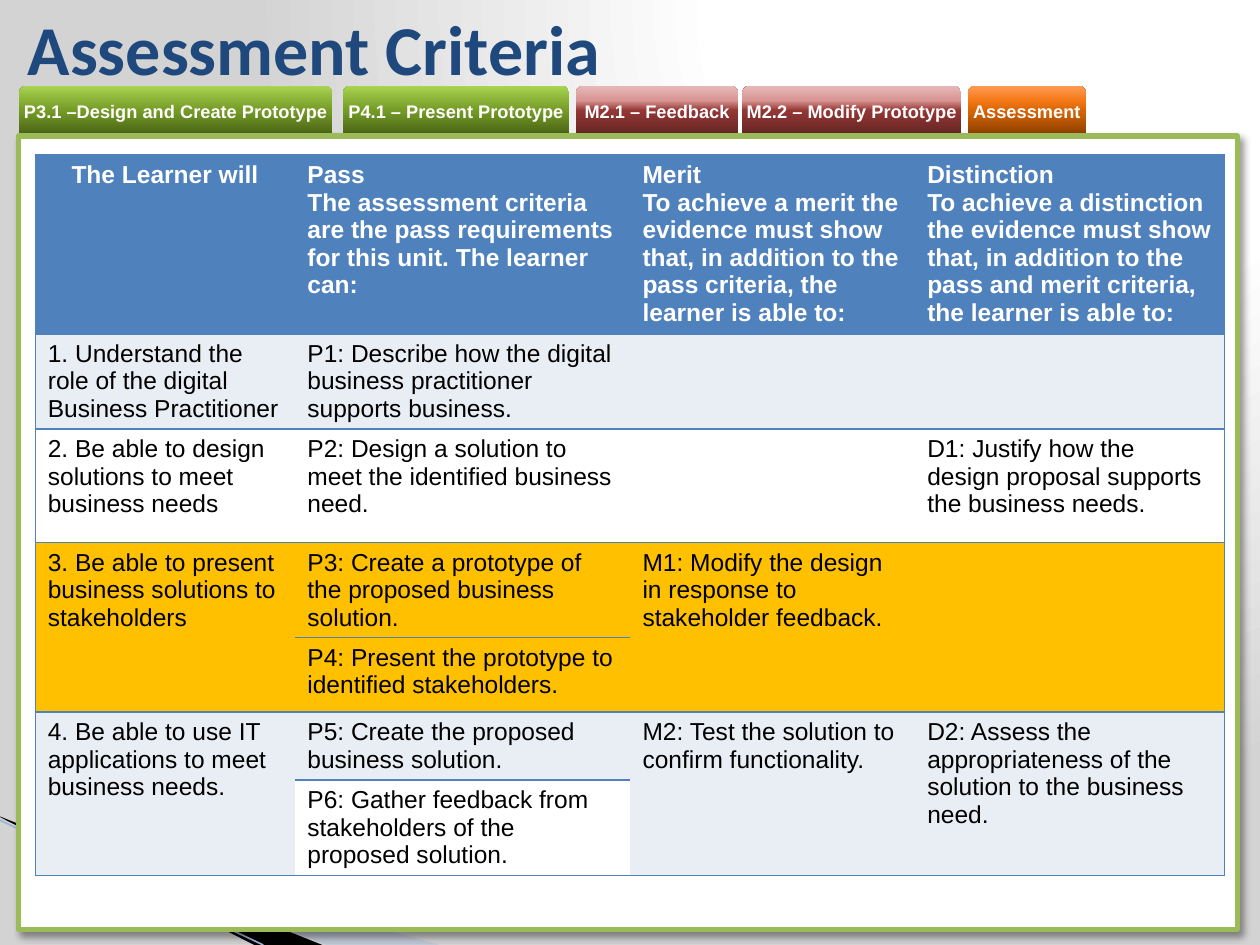
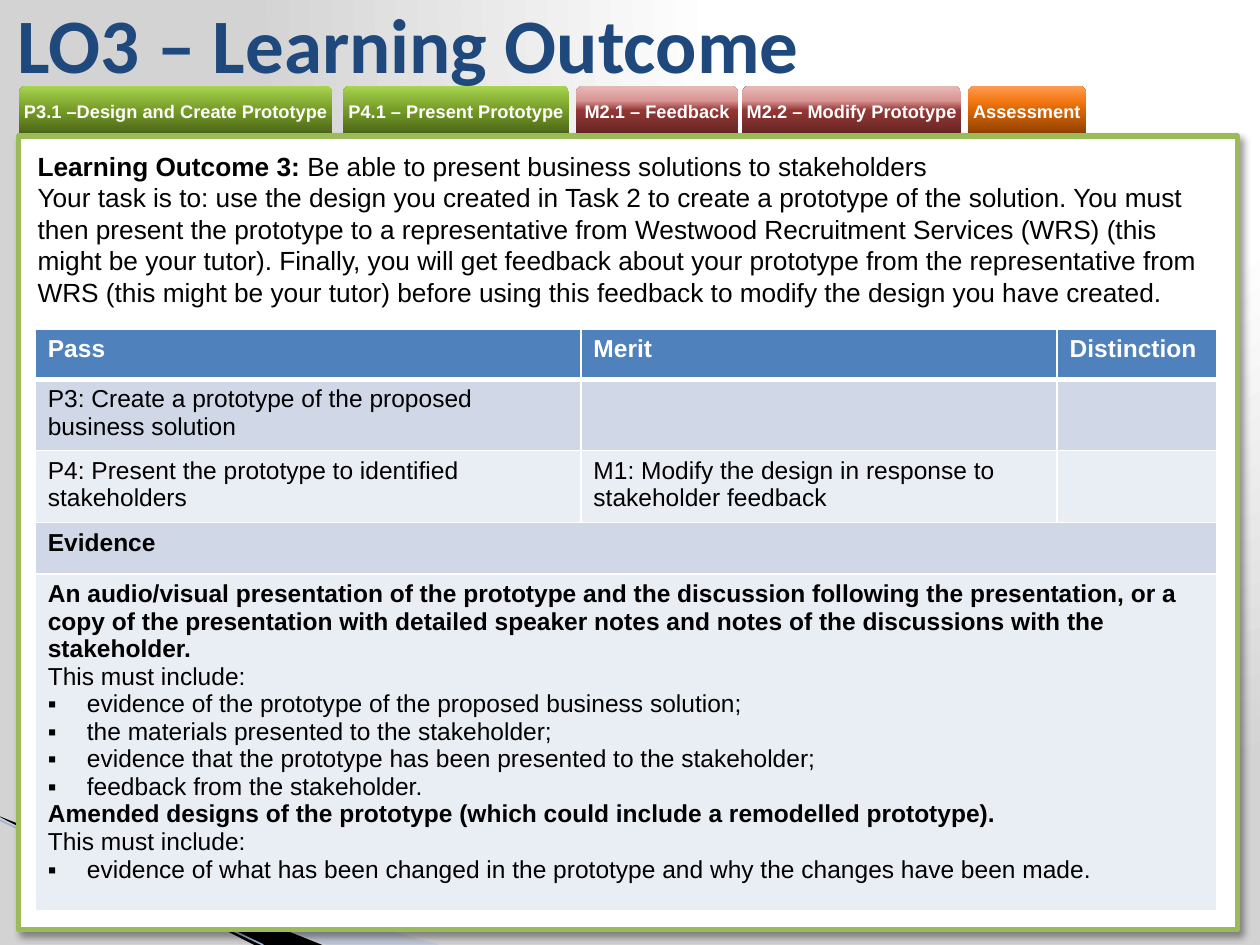
from dataclasses import dataclass, field
from typing import NamedTuple

from lxml import etree
from pptx import Presentation
from pptx.dml import color as col
from pptx.enum import shapes as shp, text as txt
from pptx.oxml import ns
from pptx.util import Inches, Pt

HUES = {
    "white": "FFFFFF", "black": "000000", "grey": "D3D3D3", "navy": "1F497D",
    "blue": "4F81BD", "pale": "E9EDF4", "band": "D0D8E8", "gold": "FFC000",
    "lime": "9BBB59", "mist": "A7B9DB", "sky": "9EB3D6",
}
# Tab gradients, from bottom to top
RAMPS = {
    "green": ("4A6316", "769C27", "89B137", "A9D651"),
    "red": ("632523", "953735", "D99694", "E6B9B8"),
    "orange": ("8B3F00", "DA6606", "F47917", "FF9C54"),
}
STOPS = (0, 50, 70, 100)
PLAIN = "{2D5ABB26-0587-4C30-8999-92F81FD0307C}"  # table style without grid


class Tab(NamedTuple):
    label: str
    left: float
    width: float
    ramp: str


class Para(NamedTuple):
    text: str
    bold: bool = False
    dot: bool = False


class Edge(NamedTuple):
    side: str
    hue: str
    width: float = 1


@dataclass
class Grid:
    left: float
    top: float
    cols: list[float]
    rows: list[float]
    cells: list[list]
    fills: list[str]
    edges: list[list[list[Edge]]]
    spans: list[tuple[int, int, int, int]]
    bold: set[int] = field(default_factory=lambda: {0})
    odd: dict = field(default_factory=dict)


TABS = [
    Tab("P3.1 –Design and Create Prototype", 0.15, 2.49, "green"),
    Tab("P4.1 – Present Prototype", 2.72, 1.8, "green"),
    Tab("M2.1 – Feedback", 4.57, 1.29, "red"),
    Tab("M2.2 – Modify Prototype", 5.89, 1.74, "red"),
    Tab("Assessment", 7.68, 0.94, "orange"),
]


# ---- Helpers ----
def rgb(name: str) -> col.RGBColor:
    return col.RGBColor.from_string(HUES[name])


def sub(node, tag: str, **vals):
    """Add a child element with the given attributes."""
    return etree.SubElement(node, ns.qn(tag), {k: str(v) for k, v in vals.items()})


def style(font, hue: str, size: float, **more) -> None:
    fmt = {"name": "Arial", "size": Pt(size), "bold": False} | more
    for key, val in fmt.items():
        setattr(font, key, val)
    font.color.rgb = rgb(hue)


def set_frame(frame, **fmt) -> None:
    for key, val in fmt.items():
        setattr(frame, key, val)


def set_ramp(fill, root, stops: list[tuple[int, str]]):
    """Make a gradient fill with these stops and return its element."""
    fill.gradient()
    grad = root.find(".//" + ns.qn("a:gradFill"))
    for kid in list(grad):
        grad.remove(kid)
    steps = sub(grad, "a:gsLst")
    for pos, hue in stops:
        sub(sub(steps, "a:gs", pos=pos * 1000), "a:srgbClr", val=hue)
    return grad


def set_back(master) -> None:
    stops = [(0, HUES["white"]), (40, HUES["white"]), (100, HUES["grey"])]
    grad = set_ramp(master.background.fill, master.element, stops)
    sub(sub(grad, "a:path", path="circle"), "a:fillToRect", l=65000, t=0, r=0, b=98000)


# ---- Shared frame of each slide ----
def add_blade(slide, hue: str, dots: list[tuple[float, float]], alpha: int = 100) -> None:
    first, *rest = [(Inches(x), Inches(y)) for x, y in dots]
    pen = slide.shapes.build_freeform(*first)
    pen.add_line_segments(rest)
    blade = pen.convert_to_shape()
    blade.shadow.inherit = False
    blade.fill.solid()
    blade.fill.fore_color.rgb = rgb(hue)
    blade.line.fill.background()
    if alpha < 100:
        tint = blade.element.spPr.find(".//" + ns.qn("a:srgbClr"))
        sub(tint, "a:alpha", val=alpha * 1000)


def add_tab(slide, tab: Tab) -> None:
    box = slide.shapes.add_shape(
        shp.MSO_SHAPE.ROUND_2_SAME_RECTANGLE,
        Inches(tab.left), Inches(0.68), Inches(tab.width), Inches(0.39))
    box.shadow.inherit = False
    box.line.fill.background()
    grad = set_ramp(box.fill, box.element.spPr, list(zip(STOPS, RAMPS[tab.ramp])))
    sub(grad, "a:lin", ang=270 * 60000, scaled=0)
    frame = box.text_frame
    set_frame(frame, margin_left=0, margin_right=0, margin_top=0, margin_bottom=0,
              word_wrap=False, vertical_anchor=txt.MSO_ANCHOR.MIDDLE)
    para = frame.paragraphs[0]
    para.text = tab.label
    para.alignment = txt.PP_ALIGN.CENTER
    style(para.font, "white", 10.4, bold=True)


def add_panel(slide) -> None:
    panel = slide.shapes.add_shape(
        shp.MSO_SHAPE.RECTANGLE, Inches(0.15), Inches(1.08), Inches(9.67), Inches(6.3))
    panel.fill.solid()
    panel.fill.fore_color.rgb = rgb("white")
    panel.line.color.rgb = rgb("lime")
    panel.line.width = Pt(3)
    panel.shadow.inherit = False
    glow = sub(panel.element.spPr.find(ns.qn("a:effectLst")), "a:outerShdw",
               blurRad=Pt(4), dist=Pt(3), dir=45 * 60000, algn="tl", rotWithShape=0)
    sub(sub(glow, "a:srgbClr", val=HUES["black"]), "a:alpha", val=40000)


def add_slide(prs, title: str, left: float, width: float, height: float, size: int):
    slide = prs.slides.add_slide(prs.slide_layouts[5])
    # Corner blades
    add_blade(slide, "mist", [(0, 6.5), (3.49, 7.5), (2.59, 7.5)], 40)
    add_blade(slide, "black", [(0, 6.48), (2.56, 7.5), (2.02, 7.5), (0.01, 6.49)])
    rule = slide.shapes.add_connector(
        shp.MSO_CONNECTOR.STRAIGHT, Inches(0), Inches(6.51), Inches(2.09), Inches(7.5))
    rule.line.color.rgb = rgb("sky")
    rule.line.width = Pt(0.95)
    sub(rule.element.spPr, "a:effectLst")
    for tab in TABS:
        add_tab(slide, tab)
    add_panel(slide)
    # Title, brought in front of the tabs
    head = slide.shapes.title
    head.element.getparent().append(head.element)
    place = {"left": left, "top": 0, "width": width, "height": height}
    for key, val in place.items():
        setattr(head, key, Inches(val))
    set_frame(head.text_frame, text=title, word_wrap=True,
              auto_size=txt.MSO_AUTO_SIZE.NONE, vertical_anchor=txt.MSO_ANCHOR.MIDDLE)
    para = head.text_frame.paragraphs[0]
    para.alignment = txt.PP_ALIGN.LEFT
    style(para.font, "navy", size, name="Calibri", bold=True)
    return slide


# ---- Tables ----
def fill_cell(cell, paras: list[Para], hue: str) -> None:
    frame = cell.text_frame
    for i, item in enumerate(paras):
        para = frame.add_paragraph() if i else frame.paragraphs[0]
        para.text = item.text
        if item.dot:
            props = para._p.get_or_add_pPr()
            props.set("marL", str(Inches(0.31)))
            props.set("indent", str(-Inches(0.31)))
            sub(props, "a:buFont", typeface="Arial")
            sub(props, "a:buChar", char="▪")
        style(para.font, hue, 14, bold=item.bold)


def add_edges(cell, edges: list[Edge]) -> None:
    props = cell._tc.get_or_add_tcPr()
    for edge in sorted(edges, key=lambda e: "LRTB".index(e.side)):
        line = sub(props, f"a:ln{edge.side}", w=Pt(edge.width))
        sub(sub(line, "a:solidFill"), "a:srgbClr", val=HUES[edge.hue])


def add_grid(slide, grid: Grid):
    frame = slide.shapes.add_table(
        len(grid.rows), len(grid.cols), Inches(grid.left), Inches(grid.top),
        Inches(sum(grid.cols)), Inches(sum(grid.rows)))
    table = frame.table
    table._tbl.tblPr.find(ns.qn("a:tableStyleId")).text = PLAIN
    for column, width in zip(table.columns, grid.cols):
        column.width = Inches(width)
    for row, height in zip(table.rows, grid.rows):
        row.height = Inches(height)
    for r1, c1, r2, c2 in grid.spans:
        table.cell(r1, c1).merge(table.cell(r2, c2))
    for r, row in enumerate(grid.cells):
        for c, body in enumerate(row):
            cell = table.cell(r, c)
            if not cell.is_spanned:
                add_edges(cell, grid.edges[r][c])
            cell.fill.solid()
            cell.fill.fore_color.rgb = rgb(grid.odd.get((r, c), grid.fills[r]))
            if isinstance(body, str):
                body = [Para(t, r in grid.bold) for t in body.split("\n")] if body else []
            fill_cell(cell, body, "black" if r else "white")
    return table


def blue_edges(col_no: int) -> list[Edge]:
    """Rules above and below, closed at the outer sides."""
    sides = "TB" + {0: "L", 3: "R"}.get(col_no, "")
    return [Edge(s, "blue") for s in sides]


def white_edges(row_no: int) -> list[Edge]:
    """Thin white lines, thick under the heading."""
    thick = {0: "B", 1: "T"}.get(row_no)
    return [Edge(s, "white", 3 if s == thick else 1) for s in "LRTB"]


# ---- Slide contents ----
CRITERIA = Grid(
    0.28, 1.23, [2.06, 2.66, 2.26, 2.46], [1.42, 0.75, 0.9, 0.75, 0.59, 0.54, 0.75],
    [
        ["The Learner will",
         "Pass\nThe assessment criteria are the pass requirements for this unit. The learner can:",
         "Merit\nTo achieve a merit the evidence must show that, in addition to the pass criteria, "
         "the learner is able to:",
         "Distinction\nTo achieve a distinction the evidence must show that, in addition to the "
         "pass and merit criteria, the learner is able to:"],
        ["1. Understand the role of the digital\nBusiness Practitioner",
         "P1: Describe how the digital business practitioner supports business.", "", ""],
        ["2. Be able to design solutions to meet business needs",
         "P2: Design a solution to meet the identified business need.", "",
         "D1: Justify how the design proposal supports the business needs."],
        ["3. Be able to present\nbusiness solutions to\nstakeholders",
         "P3: Create a prototype of the proposed business solution.",
         "M1: Modify the design in response to stakeholder feedback.", ""],
        ["", "P4: Present the prototype to identified stakeholders.", "", ""],
        ["4. Be able to use IT\napplications to meet\nbusiness needs.",
         "P5: Create the proposed business solution.",
         "M2: Test the solution to confirm functionality.",
         "D2: Assess the appropriateness of the\nsolution to the business need."],
        ["", "P6: Gather feedback from stakeholders of the proposed solution.", "", ""],
    ],
    ["blue", "pale", "white", "gold", "gold", "pale", "pale"],
    [[blue_edges(c) for c in range(4)] for _ in range(7)],
    [(r, c, r + 1, c) for r in (3, 5) for c in (0, 2, 3)],
    odd={(6, 1): "white"},
)

PROOF = [
    Para("An audio/visual presentation of the prototype and the discussion following the "
         "presentation, or a copy of the presentation with detailed speaker notes and notes of "
         "the discussions with the stakeholder.", bold=True),
    Para("This must include:"),
    Para("evidence of the prototype of the proposed business solution;", dot=True),
    Para("the materials presented to the stakeholder;", dot=True),
    Para("evidence that the prototype has been presented to the stakeholder;", dot=True),
    Para("feedback from the stakeholder.", dot=True),
    Para("Amended designs of the prototype (which could include a remodelled prototype).",
         bold=True),
    Para("This must include:"),
    Para("evidence of what has been changed in the prototype and why the changes have been made.",
         dot=True),
]
OUTCOME = Grid(
    0.28, 2.61, [4.33, 3.78, 1.27], [0.4, 0.56, 0.57, 0.41, 2.67],
    [
        ["Pass", "Merit", "Distinction"],
        ["P3: Create a prototype of the proposed business solution", "", ""],
        ["P4: Present the prototype to identified stakeholders",
         "M1: Modify the design in response to stakeholder feedback", ""],
        ["Evidence", "", ""],
        [PROOF, "", ""],
    ],
    ["blue", "band", "pale", "band", "pale"],
    [[white_edges(r)] * 3 for r in range(5)],
    [(r, 0, r, 2) for r in (3, 4)],
    bold={0, 3},
)
TASK = [
    [("Learning Outcome 3: ", True),
     ("Be able to present business solutions to stakeholders", False)],
    [("Your task is to: use the design you created in Task 2 to create a prototype of the "
      "solution. You must then present the prototype to a representative from Westwood "
      "Recruitment Services (WRS) (this might be your tutor). Finally, you will get feedback "
      "about your prototype from the representative from WRS (this might be your tutor) before "
      "using this feedback to modify the design you have created.", False)],
]


def add_task(slide) -> None:
    box = slide.shapes.add_textbox(Inches(0.2), Inches(1.14), Inches(9.46), Inches(1.36))
    frame = box.text_frame
    frame.word_wrap = True
    for i, runs in enumerate(TASK):
        para = frame.add_paragraph() if i else frame.paragraphs[0]
        for words, bold in runs:
            run = para.add_run()
            run.text = words
            style(run.font, "black", 15, bold=bold)


def main() -> None:
    prs = Presentation()
    prs.slide_width, prs.slide_height = Inches(10), Inches(7.5)
    set_back(prs.slide_master)

    # Slide 1: criteria
    slide = add_slide(prs, "Assessment Criteria", 0.12, 8.43, 0.76, 40)
    table = add_grid(slide, CRITERIA)
    table.cell(0, 0).text_frame.paragraphs[0].alignment = txt.PP_ALIGN.CENTER

    # Slide 2: outcome
    slide = add_slide(prs, "LO3 – Learning Outcome", 0.04, 8.66, 0.68, 44)
    add_task(slide)
    add_grid(slide, OUTCOME)
    prs.save("out.pptx")


if __name__ == "__main__":
    main()
